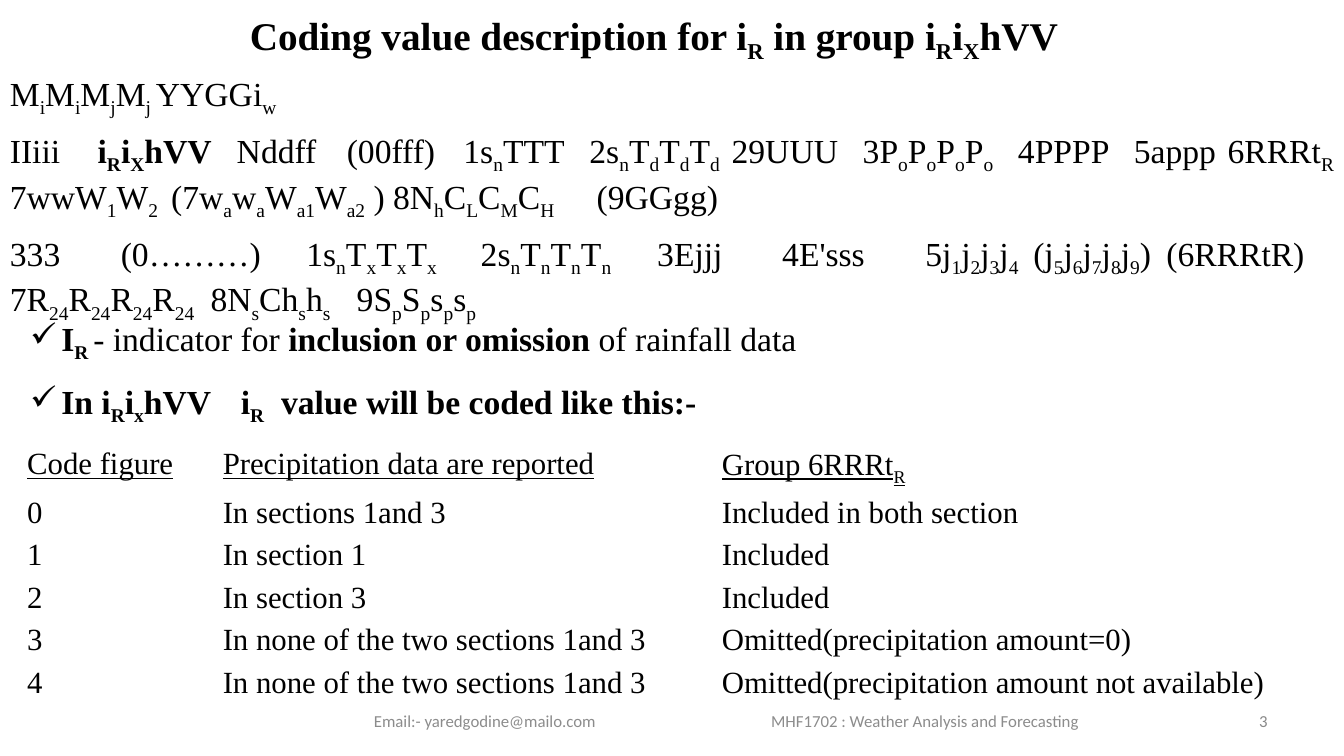
"""Builds the slide on how the rainfall indicator is coded."""
from lxml.etree import SubElement
from pptx import Presentation
from pptx.dml.color import RGBColor
from pptx.enum.text import MSO_ANCHOR, PP_ALIGN
from pptx.oxml.ns import qn
from pptx.util import Inches, Pt

COLORS = {"text": "000000", "footer": "8C8C8C", "number": "898989"}
SERIF = "Times New Roman"


def write(paragraph, text, size=24, font=SERIF, color="text", bold=False, underline=False,
          align=None, before=None, after=None, spacing=None, bullet=None, indent=0, tabs=()):
    """Write text in which * switches bold and ~ switches subscript."""
    paragraph.alignment = align
    paragraph.space_before = before
    paragraph.space_after = after
    paragraph.line_spacing = spacing
    properties = paragraph._p.get_or_add_pPr()
    if indent:
        properties.set("marL", str(Inches(indent)))
    if bullet:
        properties.set("indent", str(-Inches(indent)))
        SubElement(properties, qn("a:buChar"), char=bullet)
    if tabs:
        stops = SubElement(properties, qn("a:tabLst"))
        for position in tabs:
            SubElement(stops, qn("a:tab"), pos=str(Inches(position)), algn="l")
    for bold_index, weight_part in enumerate(text.split("*")):
        for sub_index, part in enumerate(weight_part.split("~")):
            if not part:
                continue
            run = paragraph.add_run()
            run.text = part
            run.font.name = font
            run.font.size = Pt(size)
            run.font.bold = bold != (bold_index % 2 == 1)
            run.font.underline = underline
            run.font.color.rgb = RGBColor.from_string(COLORS[color])
            if sub_index % 2:
                run._r.get_or_add_rPr().set("baseline", "-25000")


class SlideBuilder:
    """Holds the current slide and adds styled elements to it."""

    def __init__(self, slide):
        self.slide = slide

    def text(self, box, paragraphs, anchor=MSO_ANCHOR.TOP, **style):
        """Add a text box with (text, tab stops) paragraphs."""
        frame = self.slide.shapes.add_textbox(*map(Inches, box)).text_frame
        frame.word_wrap = True
        frame.vertical_anchor = anchor
        for index, (content, tabs) in enumerate(paragraphs):
            paragraph = frame.add_paragraph() if index else frame.paragraphs[0]
            write(paragraph, content, tabs=tabs, **style)

    def table(self, left, top, widths, row_height, rows):
        """Add a plain table with an underlined header row."""
        table = self.slide.shapes.add_table(
            len(rows), len(widths), Inches(left), Inches(top),
            Inches(sum(widths)), Inches(row_height * len(rows))).table
        table.first_row = table.horz_banding = False
        for column, width in zip(table.columns, widths):
            column.width = Inches(width)
        for row_index, row in enumerate(rows):
            table.rows[row_index].height = Inches(row_height)
            for column_index, content in enumerate(row):
                cell = table.cell(row_index, column_index)
                cell.fill.background()
                cell.margin_left = cell.margin_right = Inches(0.07)
                cell.margin_top = cell.margin_bottom = 0
                write(cell.text_frame.paragraphs[0], content, size=22, before=Pt(6),
                      spacing=1.15, underline=row_index == 0)


def main():
    """Build and save the slide."""
    presentation = Presentation()
    presentation.slide_width = Inches(13.33)
    presentation.slide_height = Inches(7.5)
    builder = SlideBuilder(presentation.slides.add_slide(presentation.slide_layouts[6]))

    footer = {"size": 12, "font": "Calibri", "anchor": MSO_ANCHOR.MIDDLE}
    builder.text((2.4, 6.95, 8.5, 0.4),
                 [("Email:- yaredgodine@mailo.com\tMHF1702 : Weather Analysis and Forecasting", (3.94,))],
                 color="footer", indent=1.21, **footer)
    builder.text((9.56, 6.95, 3.11, 0.4), [("3", ())],
                 color="number", align=PP_ALIGN.RIGHT, **footer)

    builder.text((2.38, 0.06, 8.47, 0.57),
                 [("Coding value description for i~R~ in group i~R~i~X~hVV", ())],
                 size=28, bold=True)

    section_one = (
        "IIiii\t*i~R~i~X~hVV*\tNddff (00fff)\t1s~n~TTT\t2s~n~T~d~T~d~T~d~\t29UUU"
        "\t3P~o~P~o~P~o~P~o~\t4PPPP\t5appp\t6RRRt~R~ "
        "7wwW~1~W~2~\t(7w~a~w~a~W~a1~W~a2~ )\t8N~h~C~L~C~M~C~H~\t\t(9GGgg)")
    section_three = (
        "333\t(0………)\t1s~n~T~x~T~x~T~x~\t2s~n~T~n~T~n~T~n~\t3Ejjj\t4E'sss"
        "\t5j~1~j~2~j~3~j~4~\t(j~5~j~6~j~7~j~8~j~9~)\t(6RRRtR) "
        "7R~24~R~24~R~24~R~24~\t8N~s~Ch~s~h~s~\t9S~p~S~p~s~p~s~p~")
    builder.text(
        (0, 0.67, 13.33, 2.34),
        [("M~i~M~i~M~j~M~j ~YYGGi~w~", ()),
         (section_one, (0.87, 1.6, 2.25, 3.8, 4.28, 5.53, 5.82, 6.94, 8.24, 9.78, 10.93, 11.86)),
         (section_three, (1.1, 1.99, 2.94, 3.44, 4.67, 6.42, 7.66, 9.08, 10.15, 11.47))],
        align=PP_ALIGN.JUSTIFY, after=Pt(8))

    check = {"bullet": "✓", "indent": 0.31}
    builder.text((0.2, 3.1, 12.9, 0.5),
                 [("*I~R ~*- indicator for* inclusion or omission *of rainfall data", ())], **check)
    builder.text((0.2, 3.73, 6.94, 0.5),
                 [("In i~R~i~x~hVV\ti~R~\tvalue will be coded like this:-", (2.09, 2.49))],
                 bold=True, **check)

    builder.table(0.2, 4.39, (1.94, 4.95, 6.24), 0.3, [
        ("Code figure", "Precipitation data are reported", "Group 6RRRt~R~"),
        ("0", "In sections 1and 3", "Included in both section"),
        ("1", "In section 1", "Included"),
        ("2", "In section 3", "Included"),
        ("3", "In none of the two sections 1and 3", "Omitted(precipitation amount=0)"),
        ("4", "In none of the two sections 1and 3", "Omitted(precipitation amount not available)"),
    ])
    presentation.save("out.pptx")


if __name__ == "__main__":
    main()
